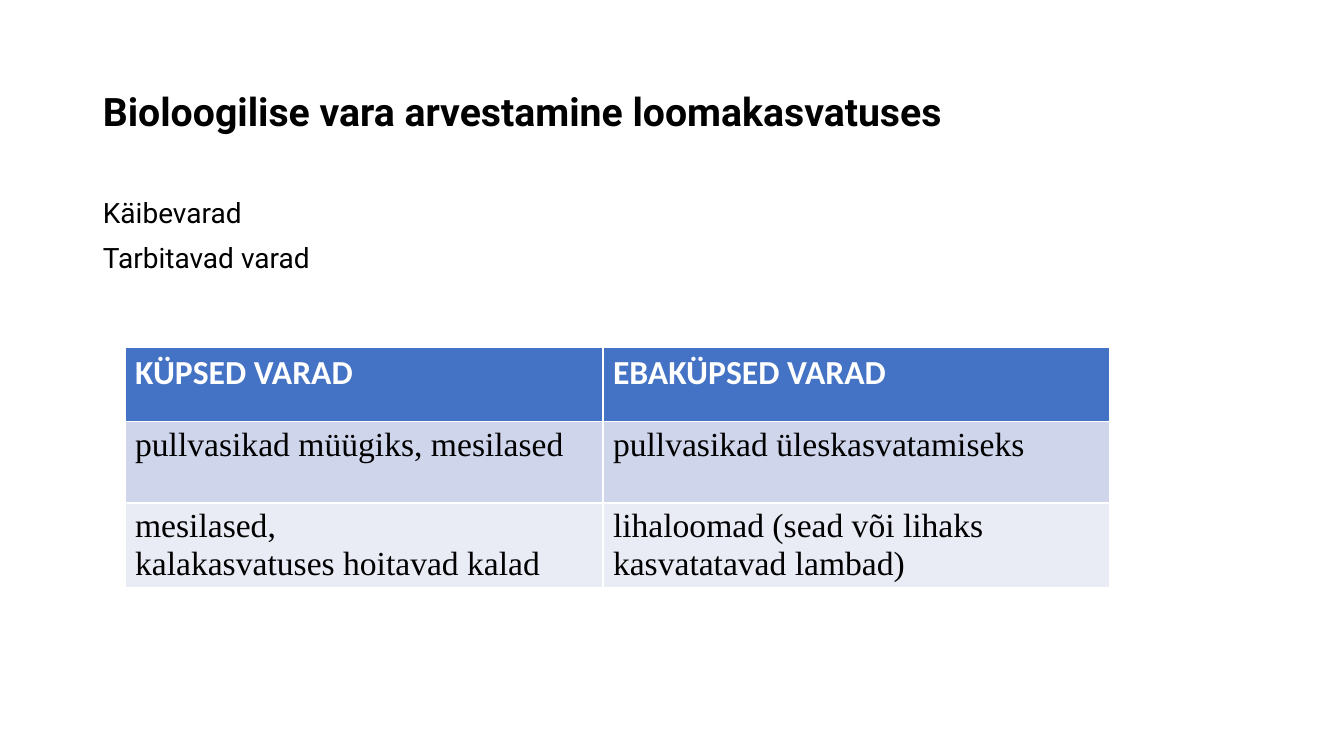
from lxml.etree import SubElement
from pptx import Presentation
from pptx.dml.color import RGBColor as RGB
from pptx.enum.text import MSO_ANCHOR as Anchor, MSO_AUTO_SIZE as AutoSize, PP_ALIGN as Align
from pptx.oxml.ns import qn
from pptx.util import Inches, Pt

TITLE = "Bioloogilise vara arvestamine loomakasvatuses"
ASSETS = ["Käibevarad", "Tarbitavad varad"]
ROWS = [
    ("KÜPSED VARAD", "EBAKÜPSED VARAD"),
    ("pullvasikad müügiks, mesilased", "pullvasikad üleskasvatamiseks"),
    ("mesilased,\nkalakasvatuses hoitavad kalad",
     "lihaloomad (sead või lihaks kasvatatavad lambad)"),
]
TITLE_BOX = (0.92, 0.4, 11.5, 1.45)
BODY_BOX = (0.92, 1.93, 11.5, 4.76)
TABLE_AT = (1.24, 3.45)
COL_WIDTHS = (4.74, 5.03)
ROW_HEIGHTS = (0.73, 0.81, 0.81)
THEME = {
    "title": {"name": "Roboto", "size": Pt(28), "bold": True, "color": "000000"},
    "body": {"name": "Roboto", "size": Pt(20), "bold": False, "color": "000000"},
    "header": {"name": "Calibri", "size": Pt(24), "bold": True, "color": "FFFFFF"},
    "cell": {"name": "Times New Roman", "size": Pt(24), "bold": False, "color": "000000"},
    "fills": ("4472C4", "CFD5EA", "E9EBF5"),
}


def write(tf, text, style, **paragraph_format):
    """Fill a text frame with paragraphs in one theme style."""
    tf.text = text
    for p in tf.paragraphs:
        for key, value in paragraph_format.items():
            setattr(p, key, value)
        for r in p.runs:
            for key, value in THEME[style].items():
                if key == "color":
                    r.font.color.rgb = RGB.from_string(value)
                else:
                    setattr(r.font, key, value)


def place(sp, box, anchor):
    """Move a placeholder and return its text frame."""
    sp.left, sp.top, sp.width, sp.height = map(Inches, box)
    tf = sp.text_frame
    tf.word_wrap, tf.auto_size, tf.vertical_anchor = True, AutoSize.NONE, anchor
    return tf


def add_assets_table(s):
    """Add the table of mature and immature assets."""
    size = (sum(COL_WIDTHS), sum(ROW_HEIGHTS))
    table = s.shapes.add_table(len(ROWS), len(COL_WIDTHS),
                               *map(Inches, TABLE_AT + size)).table
    for col, width in zip(table.columns, COL_WIDTHS):
        col.width = Inches(width)
    for i, (row, height) in enumerate(zip(table.rows, ROW_HEIGHTS)):
        row.height = Inches(height)
        for cell, text in zip(row.cells, ROWS[i]):
            cell.fill.solid()
            cell.fill.fore_color.rgb = RGB.from_string(THEME["fills"][i])
            write(cell.text_frame, text, "cell" if i else "header")


def main():
    """Build and save the slide."""
    prs = Presentation()
    prs.slide_width, prs.slide_height = Inches(13.33), Inches(7.5)
    s = prs.slides.add_slide(prs.slide_layouts[1])
    write(place(s.shapes.title, TITLE_BOX, Anchor.MIDDLE), TITLE, "title",
          alignment=Align.LEFT, line_spacing=0.9)
    tf = place(s.placeholders[1], BODY_BOX, Anchor.TOP)
    write(tf, "\n".join(ASSETS), "body", line_spacing=0.9, space_before=Pt(10))
    for p in tf.paragraphs:
        pPr = p._p.get_or_add_pPr()
        pPr.set("marL", "0")
        pPr.set("indent", "0")
        SubElement(pPr, qn("a:buNone"))
    add_assets_table(s)
    prs.save("out.pptx")


if __name__ == "__main__":
    main()
